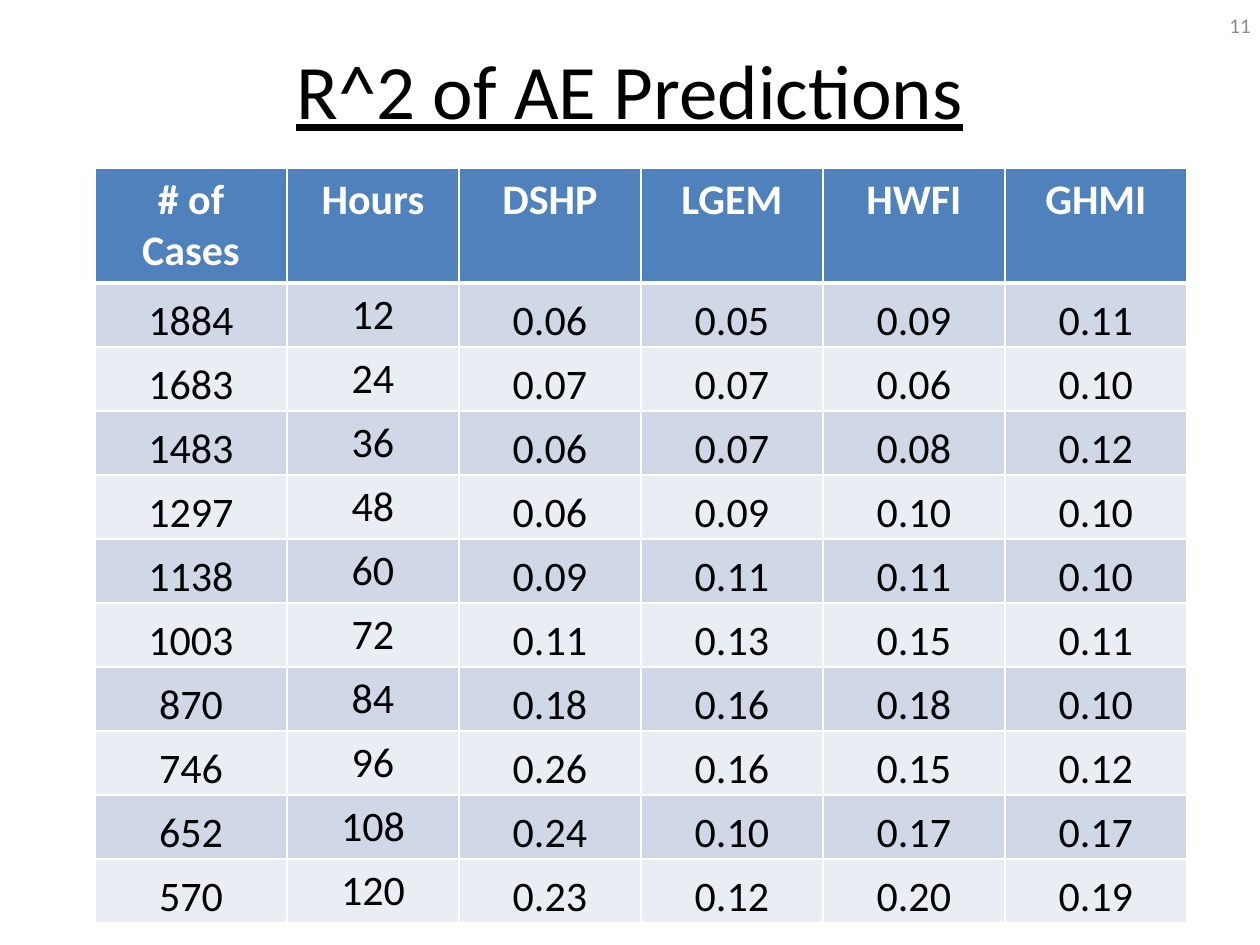
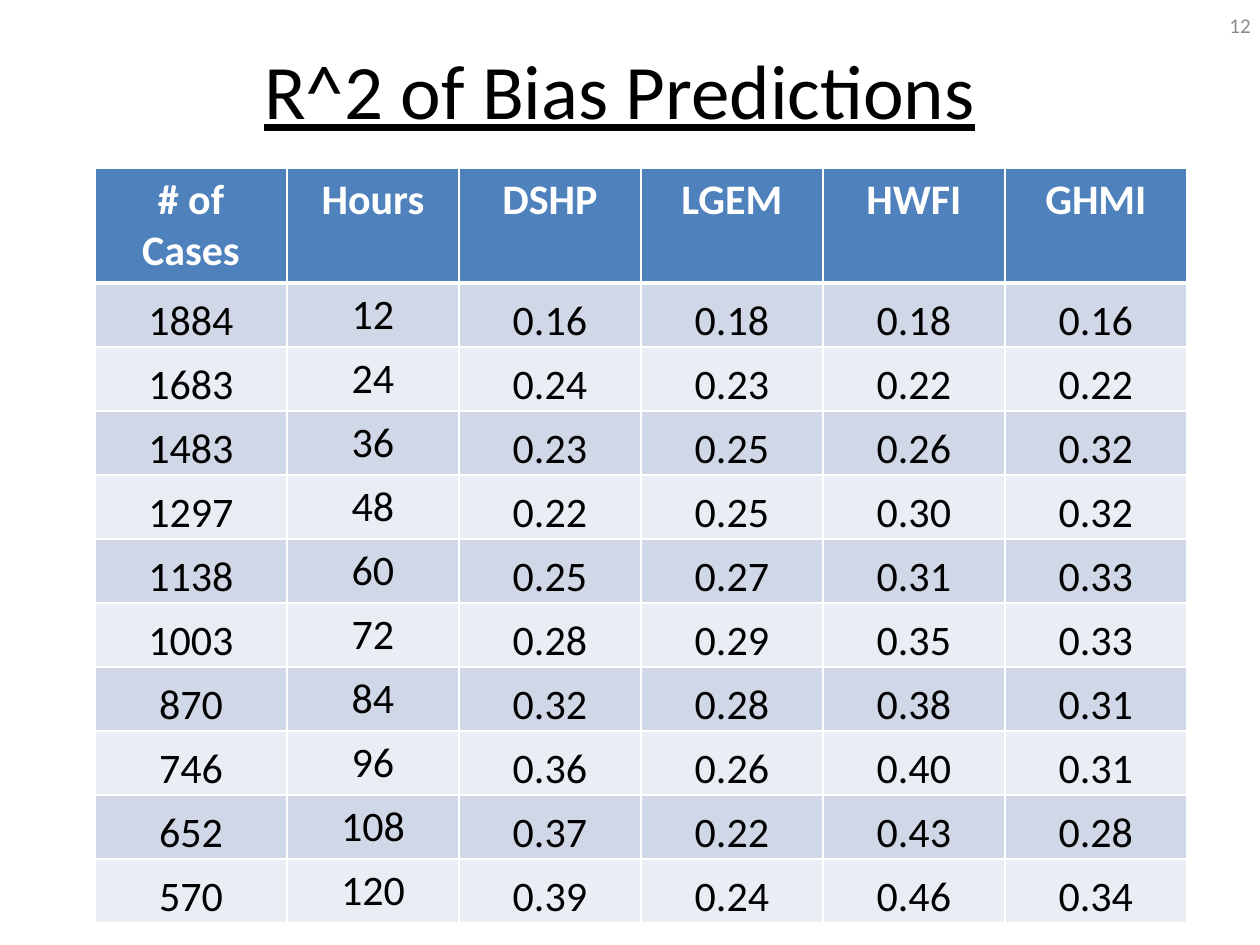
from dataclasses import dataclass

from lxml.etree import SubElement
from pptx import Presentation
from pptx.dml.color import RGBColor
from pptx.enum.text import MSO_ANCHOR, PP_ALIGN
from pptx.oxml.ns import qn
from pptx.util import Emu, Pt

PX_PER_INCH = 126


@dataclass(frozen=True)
class Theme:
    font: str = "Calibri"
    text: str = "000000"
    white: str = "FFFFFF"
    header: str = "4F81BD"
    bands: tuple = ("D0D8E8", "E9EDF4")
    page_number: str = "8C8C8C"
    title_size: int = 44
    table_size: int = 24
    page_size: int = 12
    thin_line: int = 1
    thick_line: int = 3


THEME = Theme()

HEADERS = ["# of Cases", "Hours", "DSHP", "LGEM", "HWFI", "GHMI"]
HOURS_COL = HEADERS.index("Hours")
COL_WIDTHS = [192, 172] + [182] * 4
HEADER_HEIGHT, ROW_HEIGHT = 115, 64
TABLE_LEFT, TABLE_TOP = 95, 168

CASES = [1884, 1683, 1483, 1297, 1138, 1003, 870, 746, 652, 570]
HOURS = range(12, 121, 12)

AE_SCORES = [
    (0.06, 0.05, 0.09, 0.11),
    (0.07, 0.07, 0.06, 0.10),
    (0.06, 0.07, 0.08, 0.12),
    (0.06, 0.09, 0.10, 0.10),
    (0.09, 0.11, 0.11, 0.10),
    (0.11, 0.13, 0.15, 0.11),
    (0.18, 0.16, 0.18, 0.10),
    (0.26, 0.16, 0.15, 0.12),
    (0.24, 0.10, 0.17, 0.17),
    (0.23, 0.12, 0.20, 0.19),
]
BIAS_SCORES = [
    (0.16, 0.18, 0.18, 0.16),
    (0.24, 0.23, 0.22, 0.22),
    (0.23, 0.25, 0.26, 0.32),
    (0.22, 0.25, 0.30, 0.32),
    (0.25, 0.27, 0.31, 0.33),
    (0.28, 0.29, 0.35, 0.33),
    (0.32, 0.28, 0.38, 0.31),
    (0.36, 0.26, 0.40, 0.31),
    (0.37, 0.22, 0.43, 0.28),
    (0.39, 0.24, 0.46, 0.34),
]


def px(n):
    return Emu(round(n * 914400 / PX_PER_INCH))


def write(tf, text, size, color, align=PP_ALIGN.CENTER, bold=False, underline=False):
    p = tf.paragraphs[0]
    p.alignment = align
    r = p.add_run()
    r.text = text
    r.font.name = THEME.font
    r.font.size = Pt(size)
    r.font.color.rgb = RGBColor.from_string(color)
    r.font.bold = bold
    r.font.underline = underline


def add_title(s, text, left):
    sp = s.shapes.title
    sp.left, sp.top, sp.width, sp.height = px(left), px(10), px(1134), px(158)
    sp.text_frame.vertical_anchor = MSO_ANCHOR.MIDDLE
    write(sp.text_frame, text, THEME.title_size, THEME.text, underline=True)


def add_page_number(s, number):
    tf = s.shapes.add_textbox(px(969), px(0), px(294), px(50)).text_frame
    tf.word_wrap = True
    tf.vertical_anchor = MSO_ANCHOR.MIDDLE
    write(tf, str(number), THEME.page_size, THEME.page_number, PP_ALIGN.RIGHT)


def set_borders(cell, top, bottom):
    """Draw white cell borders; top and bottom are widths in points."""
    widths = {"L": THEME.thin_line, "R": THEME.thin_line, "T": top, "B": bottom}
    tc_pr = cell._tc.get_or_add_tcPr()
    for side, width in widths.items():
        ln = SubElement(tc_pr, qn(f"a:ln{side}"), w=str(Pt(width)))
        fill = SubElement(ln, qn("a:solidFill"))
        SubElement(fill, qn("a:srgbClr"), val=THEME.white)


def format_cell(cell, row, col):
    thin, thick = THEME.thin_line, THEME.thick_line
    set_borders(cell, thick if row == 1 else thin, thick if row == 0 else thin)
    cell.fill.solid()
    fill = THEME.bands[(row - 1) % 2] if row else THEME.header
    cell.fill.fore_color.rgb = RGBColor.from_string(fill)
    if row and col != HOURS_COL:
        cell.vertical_anchor = MSO_ANCHOR.BOTTOM
        cell.margin_left = cell.margin_right = cell.margin_top = px(1)
        cell.margin_bottom = 0


def add_score_table(s, scores):
    rows = [HEADERS] + [
        [str(cases), str(hours)] + [f"{score:.2f}" for score in model_scores]
        for cases, hours, model_scores in zip(CASES, HOURS, scores)
    ]
    heights = [HEADER_HEIGHT] + [ROW_HEIGHT] * len(scores)
    table = s.shapes.add_table(
        len(rows), len(HEADERS), px(TABLE_LEFT), px(TABLE_TOP),
        px(sum(COL_WIDTHS)), px(sum(heights)),
    ).table
    for column, width in zip(table.columns, COL_WIDTHS):
        column.width = px(width)
    for i, (values, height) in enumerate(zip(rows, heights)):
        table.rows[i].height = px(height)
        color = THEME.text if i else THEME.white
        for j, value in enumerate(values):
            cell = table.cell(i, j)
            format_cell(cell, i, j)
            write(cell.text_frame, value, THEME.table_size, color, bold=i == 0)


def add_score_slide(prs, title, title_left, scores, number):
    s = prs.slides.add_slide(prs.slide_layouts.get_by_name("Title Only"))
    add_title(s, title, title_left)
    add_score_table(s, scores)
    add_page_number(s, number)


def main():
    prs = Presentation()
    prs.slide_width, prs.slide_height = px(1260), px(945)
    add_score_slide(prs, "R^2 of AE Predictions", 63, AE_SCORES, 11)
    add_score_slide(prs, "R^2 of Bias Predictions", 53, BIAS_SCORES, 12)
    prs.save("out.pptx")


if __name__ == "__main__":
    main()
